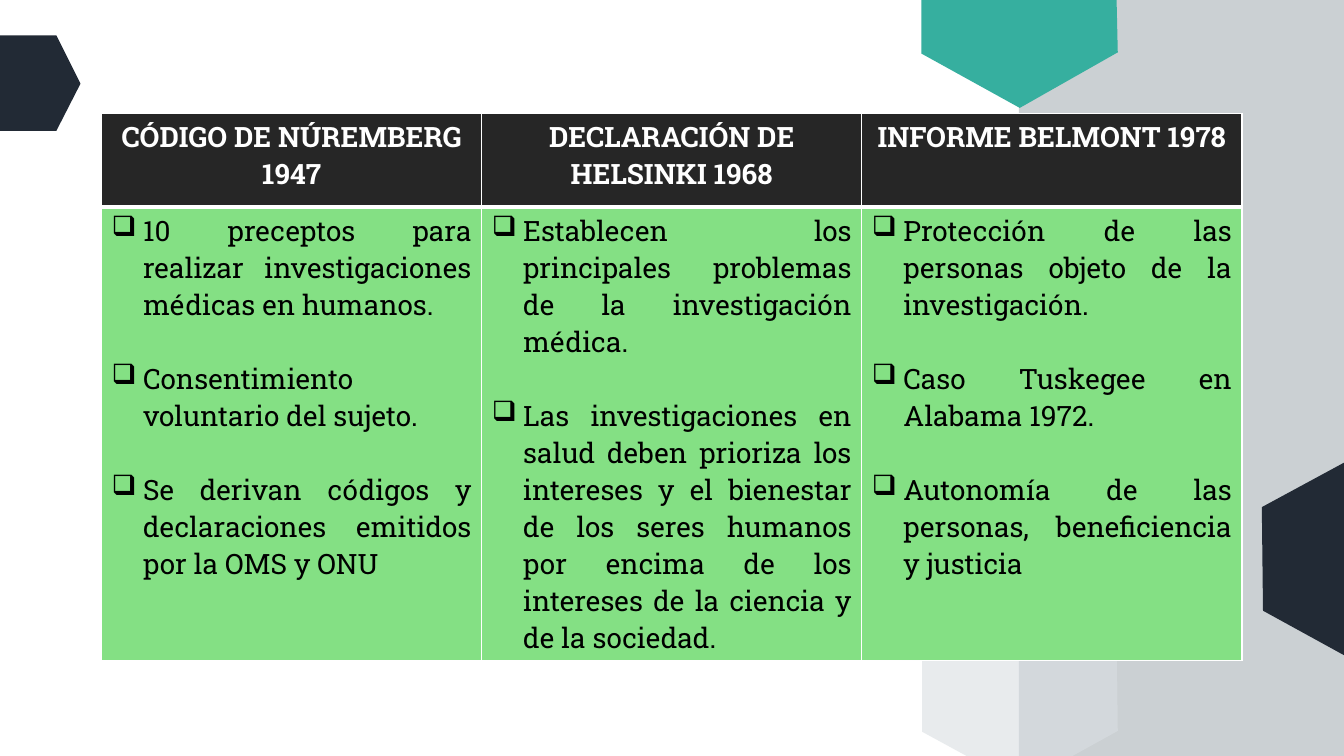
from dataclasses import dataclass

import pptx
import pptx.dml.color
import pptx.enum.shapes
import pptx.enum.text
import pptx.oxml.ns
import pptx.util
from lxml import etree

Cm = pptx.util.Cm
Pt = pptx.util.Pt
qn = pptx.oxml.ns.qn
ALIGN = pptx.enum.text.PP_ALIGN

FONT = "Roboto Slab"
WHITE, BLACK = "FFFFFF", "000000"
NAVY, TEAL, PALE, GREY = "222A35", "36AF9F", "D9DEE2", "CBD0D3"
HEADER_FILL, BODY_FILL = "262626", "84E084"
SLIDE_W, SLIDE_H = 33.87, 19.05
BAND_LEFT = 25.68
TABLE_LEFT, TABLE_TOP = 2.56, 2.85
COLUMN_W, HEADER_H, BODY_H = 9.58, 2.36, 11.4
INDENT = 0.79
THIN, THICK = 1, 3


@dataclass
class Hexagon:
    """Visible part of a decorative hexagon, corners in centimetres."""
    corners: list[tuple[float, float]]
    color: str
    opacity: int = 100


@dataclass
class EthicsCode:
    title: str
    points: list[str]


HEXAGONS = [
    Hexagon([(33.87, 11.66), (33.87, 16.51), (31.83, 15.39), (31.8, 12.78)], NAVY),
    Hexagon([(25.7, 14.25), (28.14, 15.62), (28.17, 18.42), (27.03, 19.05),
             (24.36, 19.05), (23.24, 18.44), (23.24, 15.62)], PALE, 60),
    Hexagon([(23.22, 0), (28.14, 0), (28.17, 1.32), (25.7, 2.72), (23.22, 1.35)], TEAL),
    Hexagon([(0, 0.89), (1.42, 0.89), (2.03, 2.11), (1.42, 3.3), (0, 3.3)], NAVY),
]

CODES = [
    EthicsCode("CÓDIGO DE NÚREMBERG 1947", [
        "10 preceptos para realizar investigaciones médicas en humanos.",
        "Consentimiento voluntario del sujeto.",
        "Se derivan códigos y declaraciones emitidos por la OMS y ONU",
    ]),
    EthicsCode("DECLARACIÓN DE HELSINKI 1968", [
        "Establecen los principales problemas de la investigación médica.",
        "Las investigaciones en salud deben prioriza los intereses y el bienestar "
        "de los seres humanos por encima de los intereses de la ciencia y de la sociedad.",
    ]),
    EthicsCode("INFORME BELMONT 1978", [
        "Protección de las personas objeto de la investigación.",
        "Caso Tuskegee en Alabama 1972.",
        "Autonomía de las personas, beneficiencia y justicia",
    ]),
]


def rgb(color: str) -> pptx.dml.color.RGBColor:
    return pptx.dml.color.RGBColor.from_string(color)


def paint(shape, color: str, opacity: int = 100) -> None:
    shape.shadow.inherit = False
    shape.line.fill.background()
    shape.fill.solid()
    shape.fill.fore_color.rgb = rgb(color)
    if opacity < 100:
        tint = shape.fill._xPr.find(".//" + qn("a:srgbClr"))
        etree.SubElement(tint, qn("a:alpha"), val=str(opacity * 1000))


def draw_hexagon(slide, hexagon: Hexagon) -> None:
    start, *others = [(Cm(x), Cm(y)) for x, y in hexagon.corners]
    outline = slide.shapes.build_freeform(*start)
    outline.add_line_segments(others, close=True)
    paint(outline.convert_to_shape(), hexagon.color, hexagon.opacity)


def style_cell(cell, color: str, top: int, bottom: int) -> None:
    cell.fill.solid()
    cell.fill.fore_color.rgb = rgb(color)
    properties = cell._tc.get_or_add_tcPr()
    edges = {"a:lnL": THIN, "a:lnR": THIN, "a:lnT": top, "a:lnB": bottom}
    for position, (edge, width) in enumerate(edges.items()):
        border = etree.Element(qn(edge), w=str(Pt(width)))
        fill = etree.SubElement(border, qn("a:solidFill"))
        etree.SubElement(fill, qn("a:srgbClr"), val=WHITE)
        properties.insert(position, border)


def write(paragraph, text: str, color: str, bold: bool, alignment) -> None:
    paragraph.alignment = alignment
    run = paragraph.add_run()
    run.text = text
    run.font.name = FONT
    run.font.size = Pt(20)
    run.font.bold = bold
    run.font.color.rgb = rgb(color)


def add_bullet(paragraph) -> None:
    properties = paragraph._p.get_or_add_pPr()
    properties.set("marL", str(Cm(INDENT)))
    properties.set("indent", str(-Cm(INDENT)))
    etree.SubElement(properties, qn("a:buChar"), char="❑")


def fill_column(table, column: int, code: EthicsCode) -> None:
    header, body = table.cell(0, column), table.cell(1, column)
    style_cell(header, HEADER_FILL, THIN, THICK)
    style_cell(body, BODY_FILL, THICK, THIN)
    write(header.text_frame.paragraphs[0], code.title, WHITE, True, ALIGN.CENTER)

    frame = body.text_frame
    for number, point in enumerate(code.points):
        paragraph = frame.add_paragraph() if number else frame.paragraphs[0]
        write(paragraph, point, BLACK, False, ALIGN.JUSTIFY)
        if number:
            paragraph.space_before = Pt(26.4)
        add_bullet(paragraph)


def main() -> None:
    deck = pptx.Presentation()
    deck.slide_width, deck.slide_height = Cm(SLIDE_W), Cm(SLIDE_H)
    slide = deck.slides.add_slide(deck.slide_layouts[6])

    # Background band and hexagons
    band = slide.shapes.add_shape(
        pptx.enum.shapes.MSO_SHAPE.RECTANGLE,
        Cm(BAND_LEFT), 0, Cm(SLIDE_W - BAND_LEFT), Cm(SLIDE_H))
    paint(band, GREY)
    for hexagon in HEXAGONS:
        draw_hexagon(slide, hexagon)

    # Comparison of the three codes
    comparison = slide.shapes.add_table(
        2, len(CODES), Cm(TABLE_LEFT), Cm(TABLE_TOP),
        Cm(COLUMN_W * len(CODES)), Cm(HEADER_H + BODY_H)).table
    comparison.rows[0].height = Cm(HEADER_H)
    comparison.rows[1].height = Cm(BODY_H)
    for column, code in enumerate(CODES):
        comparison.columns[column].width = Cm(COLUMN_W)
        fill_column(comparison, column, code)

    deck.save("out.pptx")


if __name__ == "__main__":
    main()
